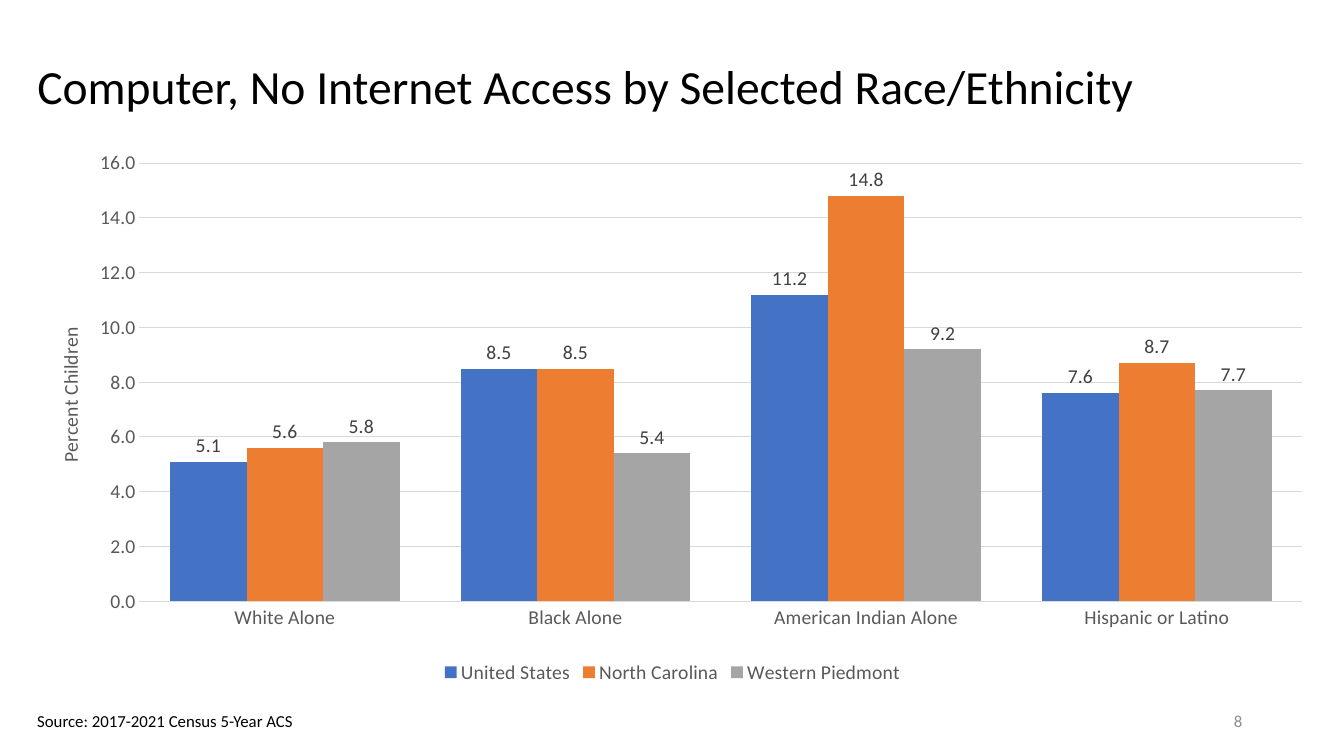
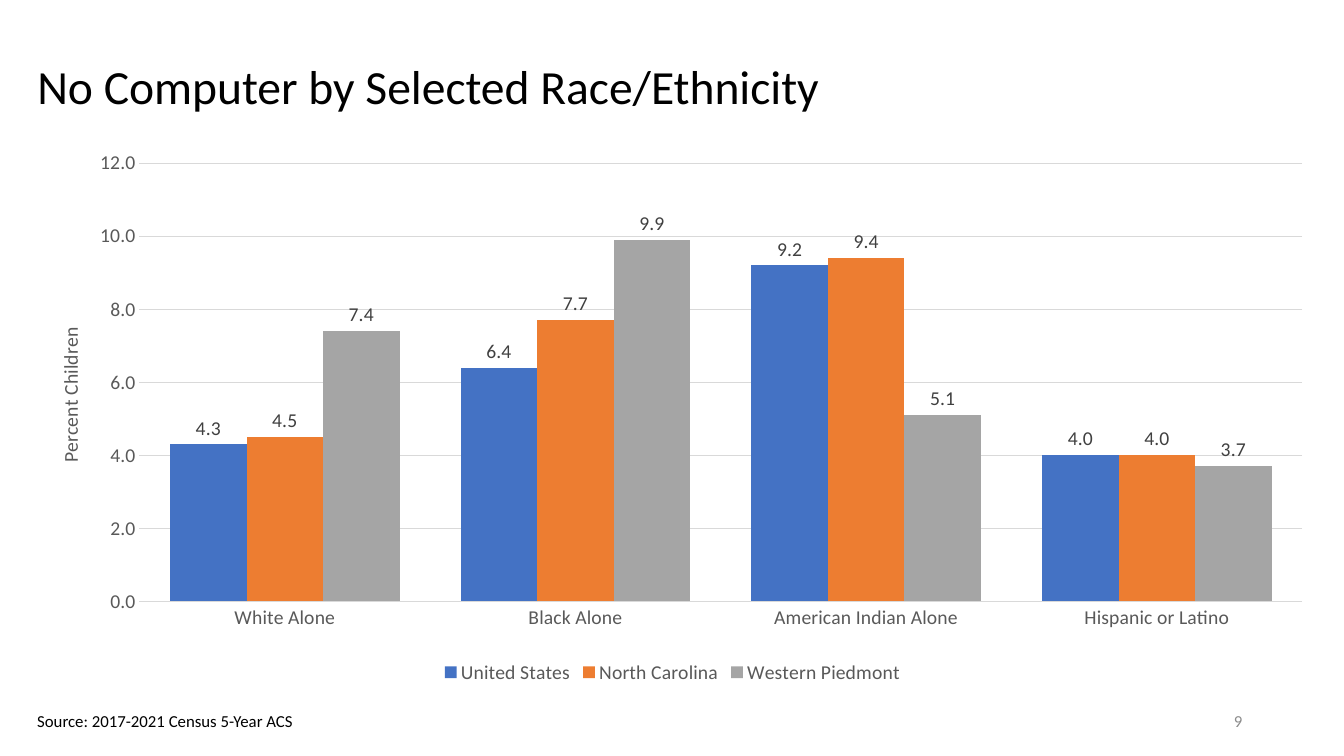
from dataclasses import dataclass

import pptx
import pptx.chart.data
import pptx.dml.color
import pptx.enum.chart
import pptx.enum.text
import pptx.oxml
import pptx.oxml.ns
import pptx.util

EMU_PER_PX = 9144
SLIDE_SIZE = (1333, 750)
TITLE_BOX = (27, 34, 1276, 109)
CHART_BOX = (27, 143, 1280, 540)
SOURCE_BOX = (27, 700, 278, 30)
NUMBER_BOX = (942, 695, 300, 40)
PLOT_PLACE = {"x": 0.087, "y": 0.035, "w": 0.901, "h": 0.805}
AXIS_TITLE_PLACE = {"x": 0.02, "y": 0.33}


@dataclass(frozen=True)
class Theme:
    font: str = "Calibri"
    text: str = "000000"
    chart_text: str = "595959"
    label: str = "404040"
    number: str = "8C8C8C"
    grid: str = "D9D9D9"
    series: tuple = ("4472C4", "ED7D31", "A5A5A5")
    title_size: int = 34
    chart_size: int = 14
    footer_size: int = 12
    line_width: float = 0.75


THEME = Theme()
VALUE_FORMAT = "#,##0.0"
AXIS_TITLE = "Percent Children"
SOURCE = "Source: 2017-2021 Census 5-Year ACS"
GROUPS = ("White Alone", "Black Alone", "American Indian Alone", "Hispanic or Latino")
REGIONS = ("United States", "North Carolina", "Western Piedmont")
SLIDES = [
    {
        "number": 8,
        "title": "Computer, No Internet Access by Selected Race/Ethnicity",
        "axis_top": 16,
        "values": [(5.1, 8.5, 11.2, 7.6), (5.6, 8.5, 14.8, 8.7), (5.8, 5.4, 9.2, 7.7)],
    },
    {
        "number": 9,
        "title": "No Computer by Selected Race/Ethnicity",
        "axis_top": 12,
        "values": [(4.3, 6.4, 9.2, 4.0), (4.5, 7.7, 9.4, 4.0), (7.4, 9.9, 5.1, 3.7)],
    },
]


def px(lengths):
    return [pptx.util.Emu(length * EMU_PER_PX) for length in lengths]


def rgb(color):
    return pptx.dml.color.RGBColor.from_string(color)


def style_font(font, size, color):
    font.name = THEME.font
    font.size = pptx.util.Pt(size)
    font.bold = False
    font.color.rgb = rgb(color)


def style_line(line):
    line.color.rgb = rgb(THEME.grid)
    line.width = pptx.util.Pt(THEME.line_width)


def set_layout(parent, index, place, target=None):
    """Give a chart part a manual layout, in fractions of the chart."""
    for old in parent.findall(pptx.oxml.ns.qn("c:layout")):
        parent.remove(old)
    parts = [("layoutTarget", target)] if target else []
    parts += [(f"{key}Mode", "edge") for key in ("x", "y")]
    parts += place.items()
    body = "".join(f'<c:{name} val="{value}"/>' for name, value in parts)
    parent.insert(index, pptx.oxml.parse_xml(
        f'<c:layout {pptx.oxml.ns.nsdecls("c")}>'
        f"<c:manualLayout>{body}</c:manualLayout></c:layout>"))


def add_title(slide, text):
    title = slide.shapes.title
    title.left, title.top, title.width, title.height = px(TITLE_BOX)
    frame = title.text_frame
    frame.text = text
    frame.word_wrap = True
    frame.auto_size = pptx.enum.text.MSO_AUTO_SIZE.NONE
    frame.vertical_anchor = pptx.enum.text.MSO_ANCHOR.MIDDLE
    para = frame.paragraphs[0]
    para.alignment = pptx.enum.text.PP_ALIGN.LEFT
    para.line_spacing = 0.9
    style_font(para.font, THEME.title_size, THEME.text)


def add_footer_text(slide, box, text, color, alignment):
    frame = slide.shapes.add_textbox(*px(box)).text_frame
    frame.text = text
    frame.word_wrap = True
    frame.vertical_anchor = pptx.enum.text.MSO_ANCHOR.MIDDLE
    para = frame.paragraphs[0]
    para.alignment = alignment
    style_font(para.font, THEME.footer_size, color)


def style_axes(chart, axis_top):
    for axis in (chart.category_axis, chart.value_axis):
        axis.major_tick_mark = axis.minor_tick_mark = pptx.enum.chart.XL_TICK_MARK.NONE
        style_font(axis.tick_labels.font, THEME.chart_size, THEME.chart_text)
    style_line(chart.category_axis.format.line)

    value_axis = chart.value_axis
    value_axis.minimum_scale, value_axis.maximum_scale = 0, axis_top
    value_axis.major_unit = 2
    value_axis.format.line.fill.background()
    style_line(value_axis.major_gridlines.format.line)
    value_axis.tick_labels.number_format = VALUE_FORMAT
    value_axis.tick_labels.number_format_is_linked = False

    axis_title = value_axis.axis_title
    axis_title.text_frame.text = AXIS_TITLE
    style_font(axis_title.text_frame.paragraphs[0].font, THEME.chart_size, THEME.chart_text)
    body = axis_title.element.xpath(".//a:bodyPr")[0]
    body.set("rot", "-5400000")
    body.set("vert", "horz")
    set_layout(axis_title.element, 1, AXIS_TITLE_PLACE)


def style_series(plot):
    plot.gap_width = 80
    plot.overlap = 0
    plot.vary_by_categories = False
    for series, color in zip(plot.series, THEME.series):
        series.format.fill.solid()
        series.format.fill.fore_color.rgb = rgb(color)
        series.invert_if_negative = False
        labels = series.data_labels
        labels.show_value = True
        labels.position = pptx.enum.chart.XL_LABEL_POSITION.OUTSIDE_END
        labels.number_format = VALUE_FORMAT
        labels.number_format_is_linked = False
        style_font(labels.font, THEME.chart_size, THEME.label)


def add_column_chart(slide, values, axis_top):
    data = pptx.chart.data.CategoryChartData(number_format=VALUE_FORMAT)
    data.categories = GROUPS
    for region, region_values in zip(REGIONS, values):
        data.add_series(region, region_values)
    chart = slide.shapes.add_chart(
        pptx.enum.chart.XL_CHART_TYPE.COLUMN_CLUSTERED, *px(CHART_BOX), data).chart
    style_font(chart.font, THEME.chart_size, THEME.text)
    chart.has_title = False
    chart.has_legend = True
    chart.legend.position = pptx.enum.chart.XL_LEGEND_POSITION.BOTTOM
    chart.legend.include_in_layout = False
    style_font(chart.legend.font, THEME.chart_size, THEME.chart_text)
    style_axes(chart, axis_top)
    style_series(chart.plots[0])
    set_layout(chart.element.xpath(".//c:plotArea")[0], 0, PLOT_PLACE, "inner")


def main():
    deck = pptx.Presentation()
    deck.slide_width, deck.slide_height = px(SLIDE_SIZE)
    title_only = deck.slide_layouts.get_by_name("Title Only")
    align = pptx.enum.text.PP_ALIGN
    for page in SLIDES:
        slide = deck.slides.add_slide(title_only)
        add_title(slide, page["title"])
        add_footer_text(slide, NUMBER_BOX, str(page["number"]), THEME.number, align.RIGHT)
        add_footer_text(slide, SOURCE_BOX, SOURCE, THEME.text, align.LEFT)
        add_column_chart(slide, page["values"], page["axis_top"])
    deck.save("out.pptx")


if __name__ == "__main__":
    main()
